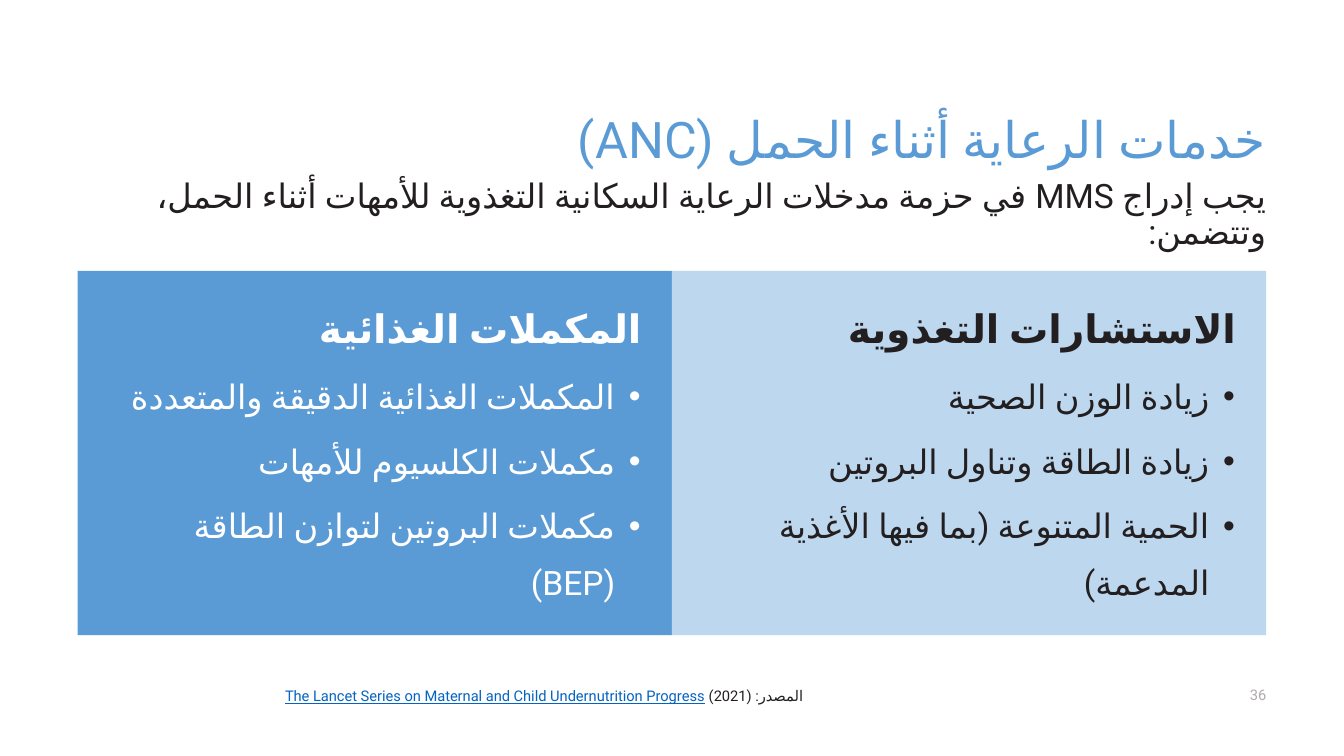
from dataclasses import dataclass

from lxml import etree
from pptx import Presentation
from pptx import util as u
from pptx.dml.color import RGBColor
from pptx.enum import shapes, text
from pptx.oxml.ns import qn


@dataclass(frozen=True)
class Theme:
    font: str = "Roboto"
    lang: str = "ar-SA"
    blue: str = "5B9BD5"
    pale: str = "BDD7EE"
    ink: str = "231F20"
    white: str = "FFFFFF"
    link: str = "0563C1"
    grey: str = "AFABAB"
    title: float = 36
    heading: float = 28
    body: float = 24
    small: float = 10.5


T = Theme()


def px(n):
    return u.Emu(n * 9525)


def set_frame(sp, anchor, inset=0):
    tf = sp.text_frame
    tf.word_wrap = True
    tf.auto_size = text.MSO_AUTO_SIZE.NONE
    tf.vertical_anchor = anchor
    tf.margin_left = tf.margin_right = px(inset)
    tf.margin_top = tf.margin_bottom = px(inset)
    return tf


def set_paragraph(p, spacing=1.0, before=0, bullet=False):
    p.alignment = text.PP_ALIGN.RIGHT
    p.line_spacing = spacing
    p.space_before = u.Pt(before)
    pPr = p._p.get_or_add_pPr()
    pPr.set("rtl", "1")
    pPr.set("marR", "0")
    pPr.set("marL", str(px(25) if bullet else 0))
    pPr.set("indent", str(px(-24) if bullet else 0))
    if bullet:
        p.level = 1
        etree.SubElement(pPr, qn("a:buFont")).set("typeface", "Arial")
        etree.SubElement(pPr, qn("a:buChar")).set("char", "•")
    else:
        etree.SubElement(pPr, qn("a:buNone"))


def add_run(p, words, size, color, bold=False, underline=False):
    r = p.add_run()
    r.text = words
    f = r.font
    f.name, f.size, f.bold, f.underline = T.font, u.Pt(size), bold, underline
    f.color.rgb = RGBColor.from_string(color)
    rPr = r._r.get_or_add_rPr()
    rPr.set("lang", T.lang)
    etree.SubElement(rPr, qn("a:cs")).set("typeface", T.font)


def add_title(s, box, words):
    sp = s.shapes.title
    sp.left, sp.top, sp.width, sp.height = map(px, box)
    p = set_frame(sp, text.MSO_ANCHOR.BOTTOM).paragraphs[0]
    set_paragraph(p, 0.9)
    add_run(p, words, T.title, T.blue)


def add_line(s, box, runs, size, anchor=text.MSO_ANCHOR.MIDDLE, spacing=1.0):
    sp = s.shapes.add_textbox(*map(px, box))
    p = set_frame(sp, anchor).paragraphs[0]
    set_paragraph(p, spacing)
    for words, color, underline in runs:
        add_run(p, words, size, color, underline=underline)


def add_panel(s, box, fill, color, heading, items):
    sp = s.shapes.add_shape(shapes.MSO_SHAPE.RECTANGLE, *map(px, box))
    sp.shadow.inherit = False
    sp.fill.solid()
    sp.fill.fore_color.rgb = RGBColor.from_string(fill)
    sp.line.fill.background()
    tf = set_frame(sp, text.MSO_ANCHOR.MIDDLE, 29)
    p = tf.paragraphs[0]
    set_paragraph(p)
    add_run(p, heading, T.heading, color, bold=True)
    for item in items:
        p = tf.add_paragraph()
        set_paragraph(p, 1.4, 6, bullet=True)
        add_run(p, item, T.body, color)


def add_panels(s, box, panels):
    left, top, width, height = box
    step = width // len(panels)
    for i, panel in enumerate(panels):
        add_panel(s, (left + i * step, top, step, height), *panel)


def add_footer(s, box, source, number):
    left, top, width, height = box
    add_line(s, (left + 71, top, 620, height), source, T.small, spacing=1.1)
    add_line(s, (left + width - 33, top, 33, height), [(number, T.grey, False)], T.small)


def main():
    prs = Presentation()
    prs.slide_width, prs.slide_height = px(1280), px(720)
    s = prs.slides.add_slide(prs.slide_layouts[5])
    left, width = 74, 1132

    add_title(s, (left, 31, width, 130), "خدمات الرعاية أثناء الحمل (ANC) ")
    intro = "يجب إدراج MMS في حزمة مدخلات الرعاية السكانية التغذوية للأمهات أثناء الحمل، وتتضمن: "
    add_line(s, (left, 171, width, 76), [(intro, T.ink, False)], T.body,
             text.MSO_ANCHOR.TOP, 0.9)
    add_panels(s, (left, 258, width, 347), [
        (T.blue, T.white, "المكملات الغذائية", [
            "المكملات الغذائية الدقيقة والمتعددة",
            "مكملات الكلسيوم للأمهات",
            "مكملات البروتين لتوازن الطاقة (BEP)",
        ]),
        (T.pale, T.ink, "الاستشارات التغذوية ", [
            "زيادة الوزن الصحية",
            "زيادة الطاقة وتناول البروتين",
            "الحمية المتنوعة (بما فيها الأغذية المدعمة)",
        ]),
    ])
    add_footer(s, (left, 643, width, 38), [
        ("المصدر: ", T.ink, False),
        ("The Lancet Series on Maternal and Child Undernutrition Progress", T.link, True),
        (" (2021)", T.ink, False),
    ], "36")
    prs.save("out.pptx")


if __name__ == "__main__":
    main()
